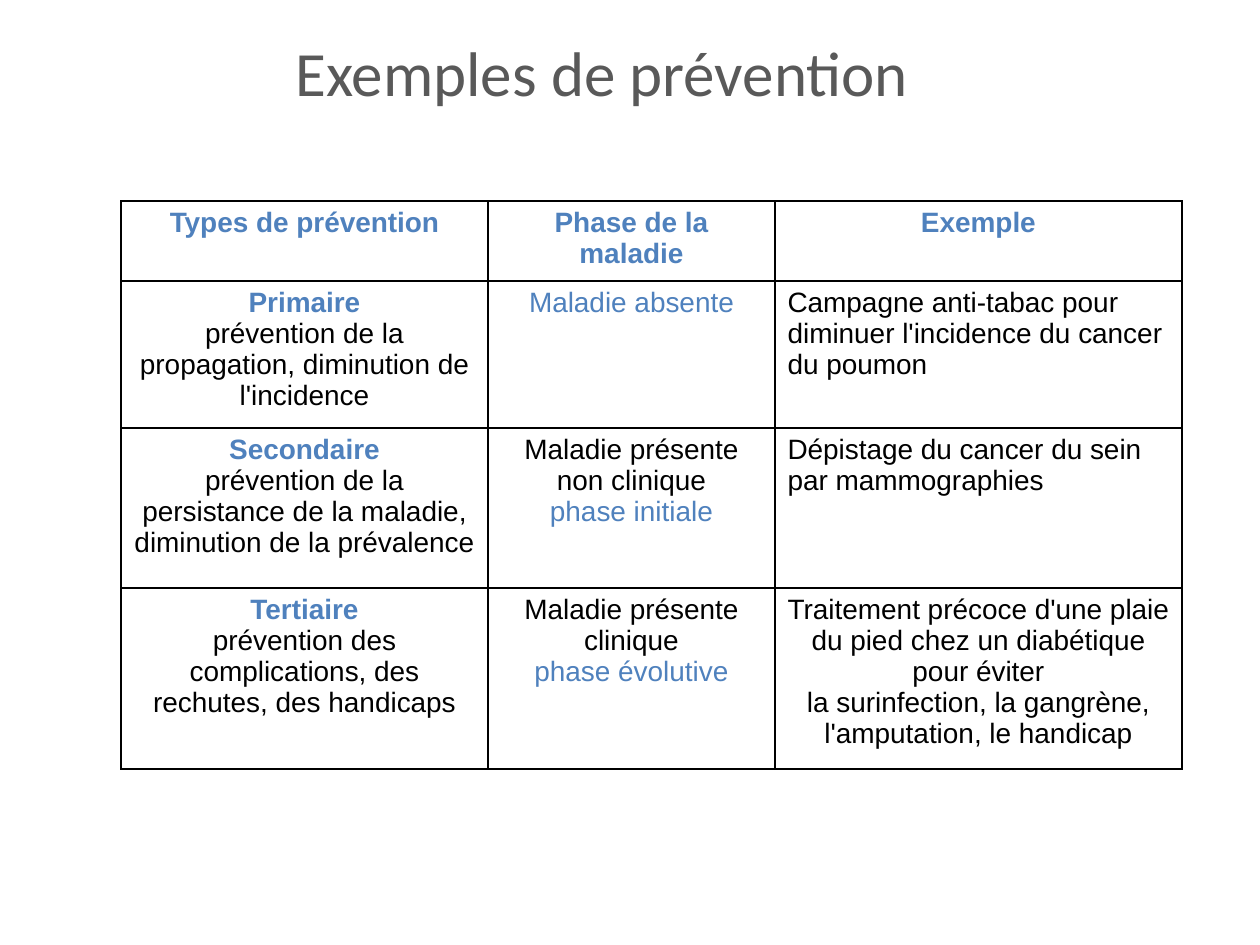
import dataclasses

import lxml.etree
import pptx
import pptx.dml.color
import pptx.enum.text
import pptx.oxml.ns
import pptx.util

PX = pptx.util.Inches(1) // 126
BLUE = pptx.dml.color.RGBColor(0x4F, 0x81, 0xBD)
BLACK = pptx.dml.color.RGBColor(0, 0, 0)
GREY = pptx.dml.color.RGBColor(0x59, 0x59, 0x59)
CENTER = pptx.enum.text.PP_ALIGN.CENTER
LEFT = pptx.enum.text.PP_ALIGN.LEFT

COLUMN_WIDTHS = (367, 287, 407)
ROW_HEIGHTS = (80, 147, 160, 181)


@dataclasses.dataclass(frozen=True)
class Span:
    text: str
    color: pptx.dml.color.RGBColor = BLACK
    bold: bool = False
    size: int = 16
    font: str = "Arial"


@dataclasses.dataclass(frozen=True)
class Content:
    paragraphs: tuple[tuple[Span, ...], ...]
    align: pptx.enum.text.PP_ALIGN = CENTER


def heading(text: str) -> Content:
    return Content(((Span(text, BLUE, True),),))


def prevention(level: str, aim: str) -> Content:
    return Content(((Span(level + "\n", BLUE, True), Span(aim)),))


def phase(state: str, stage: str) -> Content:
    return Content(((Span(state),), (Span(stage, BLUE),)))


def example(text: str, align: pptx.enum.text.PP_ALIGN = LEFT) -> Content:
    return Content(((Span(text),),), align)


TITLE = Content(((Span("Exemples de prévention", GREY, size=36, font="Calibri"),),))

ROWS = (
    (heading("Types de prévention"), heading("Phase de la maladie"), heading("Exemple")),
    (
        prevention("Primaire", "prévention de la propagation, diminution de l'incidence"),
        Content(((Span("Maladie absente", BLUE),),)),
        example("Campagne anti-tabac pour diminuer l'incidence du cancer du poumon"),
    ),
    (
        prevention(
            "Secondaire",
            "prévention de la persistance de la maladie, diminution de la prévalence",
        ),
        phase("Maladie présente\nnon clinique", "phase initiale"),
        example("Dépistage du cancer du sein par mammographies"),
    ),
    (
        prevention("Tertiaire", "prévention des complications, des rechutes, des handicaps"),
        phase("Maladie présente\nclinique", "phase évolutive"),
        example(
            "Traitement précoce d'une plaie du pied chez un diabétique pour éviter\n"
            "la surinfection, la gangrène,\nl'amputation, le handicap",
            CENTER,
        ),
    ),
)


def add_span(paragraph: pptx.text.text._Paragraph, span: Span) -> None:
    """Add the span's runs, with a line break at each newline."""
    for number, line in enumerate(span.text.split("\n")):
        if number:
            paragraph.add_line_break()
        if not line:
            continue
        run = paragraph.add_run()
        run.text = line
        run.font.color.rgb = span.color
        font_format = {
            "name": span.font,
            "size": pptx.util.Pt(span.size),
            "bold": span.bold,
        }
        for attribute, value in font_format.items():
            setattr(run.font, attribute, value)


def write(frame: pptx.text.text.TextFrame, content: Content) -> None:
    frame.word_wrap = True
    for number, spans in enumerate(content.paragraphs):
        paragraph = frame.add_paragraph() if number else frame.paragraphs[0]
        paragraph.alignment = content.align
        for span in spans:
            add_span(paragraph, span)


def add_borders(cell: pptx.table._Cell) -> None:
    """Draw a one-point black line on all four sides."""
    qn = pptx.oxml.ns.qn
    properties = cell._tc.get_or_add_tcPr()
    for position, side in enumerate(("lnL", "lnR", "lnT", "lnB")):
        line = lxml.etree.Element(qn(f"a:{side}"), w=str(pptx.util.Pt(1)))
        fill = lxml.etree.SubElement(line, qn("a:solidFill"))
        lxml.etree.SubElement(fill, qn("a:srgbClr"), val=str(BLACK))
        properties.insert(position, line)


def add_title(slide: pptx.slide.Slide) -> None:
    box = slide.shapes.add_textbox(35 * PX, 16 * PX, 1134 * PX, 110 * PX)
    write(box.text_frame, TITLE)
    box.text_frame.vertical_anchor = pptx.enum.text.MSO_ANCHOR.MIDDLE


def add_prevention_table(slide: pptx.slide.Slide) -> None:
    table = slide.shapes.add_table(
        len(ROWS), len(COLUMN_WIDTHS), 121 * PX, 201 * PX,
        sum(COLUMN_WIDTHS) * PX, sum(ROW_HEIGHTS) * PX,
    ).table
    table.first_row = table.horz_banding = False
    for column, width in zip(table.columns, COLUMN_WIDTHS):
        column.width = width * PX
    for row, height, contents in zip(table.rows, ROW_HEIGHTS, ROWS):
        row.height = height * PX
        for cell, content in zip(row.cells, contents):
            cell.fill.background()
            add_borders(cell)
            write(cell.text_frame, content)


def main() -> None:
    presentation = pptx.Presentation()
    presentation.slide_width = 1260 * PX
    presentation.slide_height = 945 * PX
    slide = presentation.slides.add_slide(presentation.slide_layouts[6])
    add_prevention_table(slide)
    add_title(slide)
    presentation.save("out.pptx")


if __name__ == "__main__":
    main()
